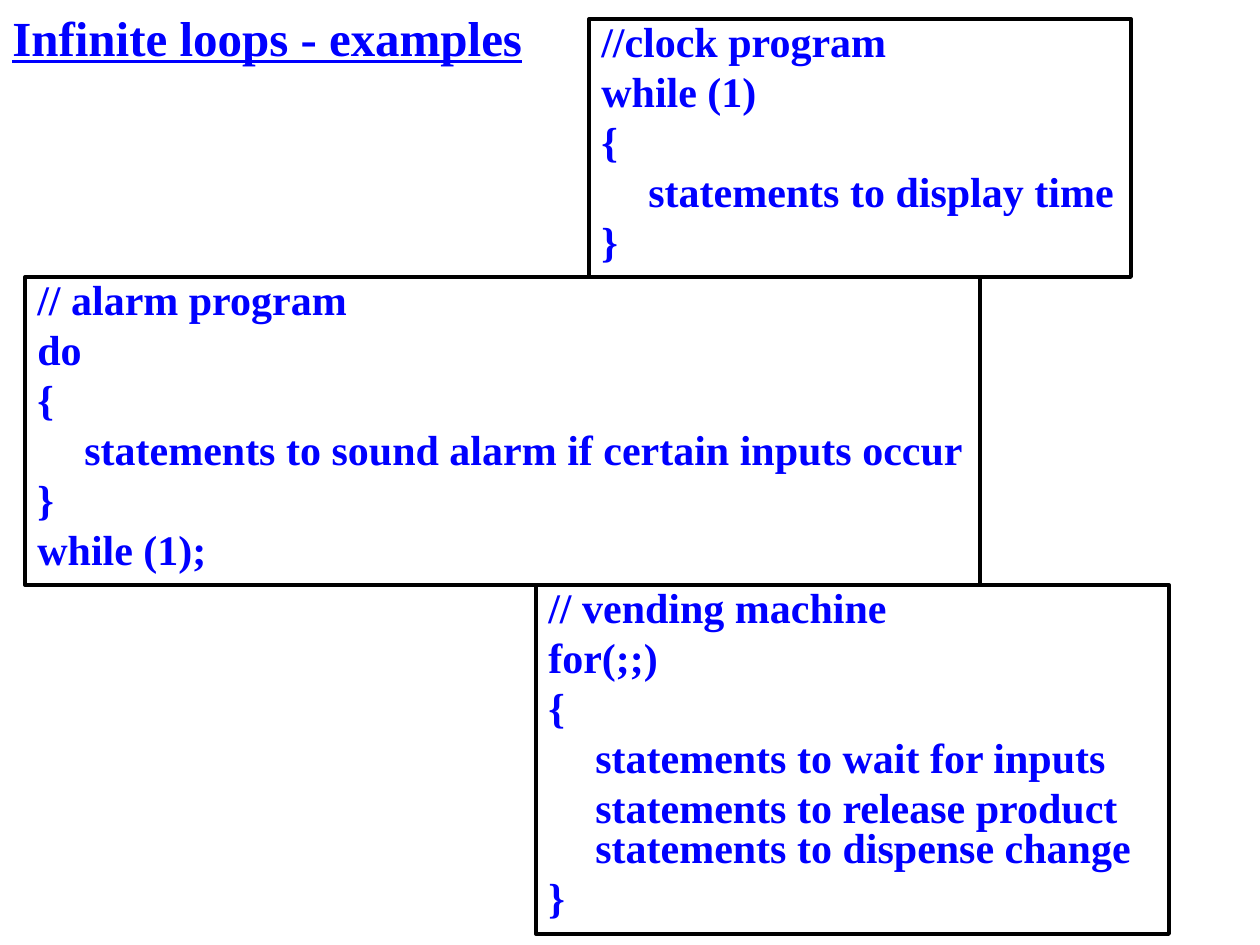
from dataclasses import dataclass

from pptx import Presentation
from pptx.dml.color import RGBColor
from pptx.enum import shapes, text
from pptx.util import Pt

PX = 914400 / 126


@dataclass(frozen=True)
class Theme:
    font: str = "Times New Roman"
    ink: RGBColor = RGBColor(0x00, 0x00, 0xFF)
    border: RGBColor = RGBColor(0x00, 0x00, 0x00)
    border_width: float = 2.25
    title_size: int = 28
    code_size: int = 24
    line_spacing: float = 0.8
    space_before: float = 5.5
    hanging_px: int = 47


THEME = Theme()

CLOCK = ["//clock program", "while (1)", "{", "\tstatements to display time", "}"]
ALARM = [
    "// alarm program",
    "do",
    "{",
    "\tstatements to sound alarm if certain inputs occur",
    "}",
    "while (1);",
]
VENDING = [
    "// vending machine",
    "for(;;)",
    "{",
    "\tstatements to wait for inputs",
    "\tstatements to release product statements to dispense change",
    "}",
]


def emu(px):
    return round(px * PX)


def apply(target, formats):
    for name, value in formats.items():
        setattr(target, name, value)


def add_span(para, words, size, **extra):
    span = para.add_run()
    span.text = words
    apply(span.font, {"name": THEME.font, "size": Pt(size), "bold": True, **extra})
    span.font.color.rgb = THEME.ink


def add_title(page, box, words):
    title = page.shapes.add_textbox(*map(emu, box))
    apply(title.text_frame, {
        "word_wrap": True,
        "vertical_anchor": text.MSO_ANCHOR.MIDDLE,
    })
    add_span(title.text_frame.paragraphs[0], words, THEME.title_size, underline=True)


def add_code_box(page, box, lines, wrap=False):
    # Outlined frame
    panel = page.shapes.add_shape(shapes.MSO_SHAPE.RECTANGLE, *map(emu, box))
    panel.shadow.inherit = False
    panel.fill.background()
    panel.line.color.rgb = THEME.border
    panel.line.width = Pt(THEME.border_width)

    # Code lines with a hanging indent
    frame = panel.text_frame
    apply(frame, {
        "word_wrap": wrap,
        "auto_size": text.MSO_AUTO_SIZE.SHAPE_TO_FIT_TEXT,
        "vertical_anchor": text.MSO_ANCHOR.TOP,
    })
    hanging = emu(THEME.hanging_px)
    for index, line in enumerate(lines):
        para = frame.add_paragraph() if index else frame.paragraphs[0]
        apply(para, {
            "alignment": text.PP_ALIGN.LEFT,
            "line_spacing": THEME.line_spacing,
            "space_before": Pt(THEME.space_before),
        })
        properties = para._p.get_or_add_pPr()
        properties.set("marL", str(hanging))
        properties.set("indent", str(-hanging))
        add_span(para, line, THEME.code_size)


def main():
    deck = Presentation()
    deck.slide_width, deck.slide_height = emu(1260), emu(945)
    page = deck.slides.add_slide(deck.slide_layouts[6])

    add_title(page, (0, 0, 881, 73), "Infinite loops - examples")
    add_code_box(page, (589, 19, 542, 258), CLOCK)
    add_code_box(page, (25, 277, 955, 308), ALARM)
    add_code_box(page, (536, 585, 633, 349), VENDING, wrap=True)

    deck.save("out.pptx")


if __name__ == "__main__":
    main()
